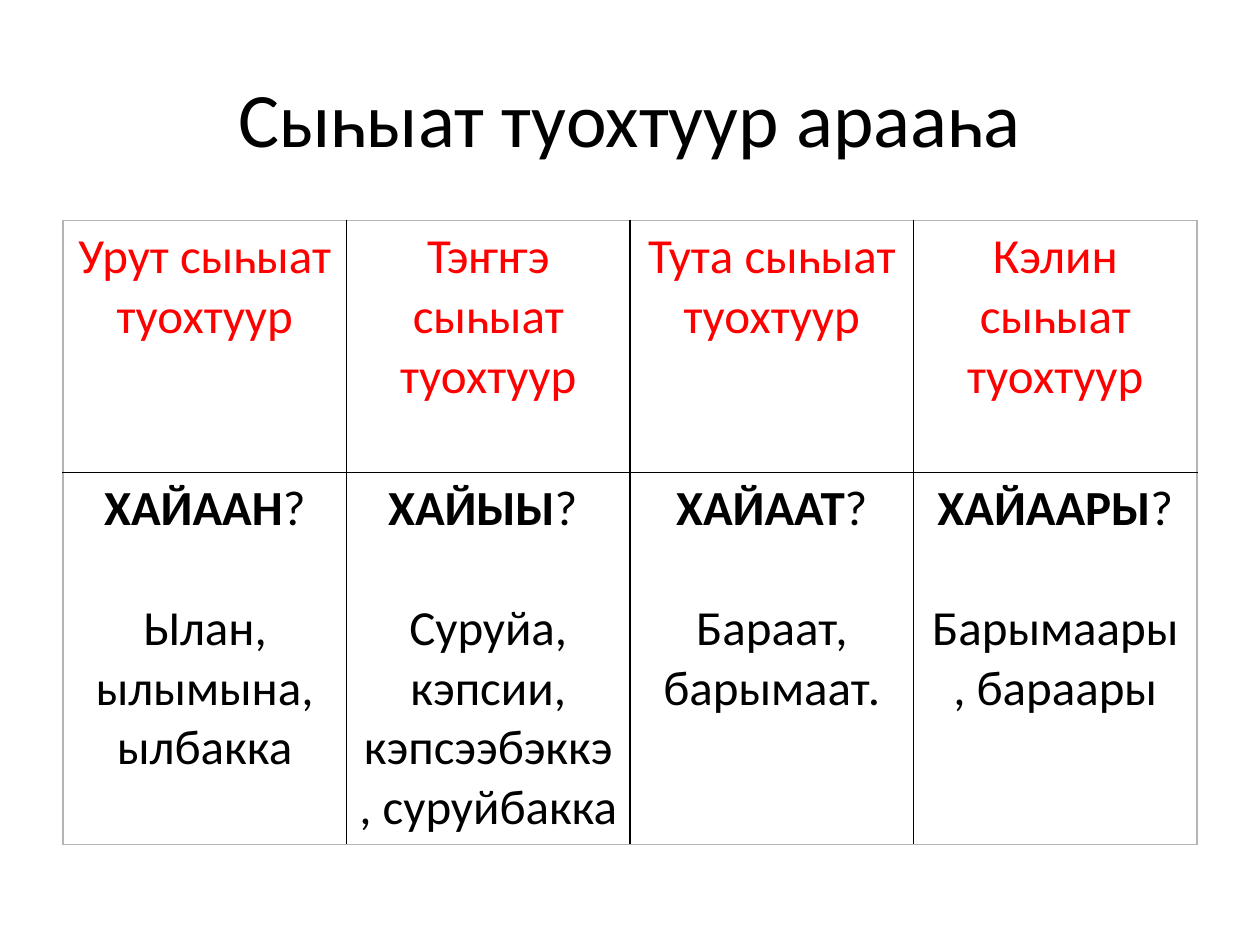
import pptx
import pptx.dml.color
import pptx.enum.text
import pptx.oxml
import pptx.oxml.ns
import pptx.util

Inches = pptx.util.Inches
Pt = pptx.util.Pt

TITLE = "Сыһыат туохтуур арааһа"
VERB_FORMS = [
    ("Урут сыһыат туохтуур", "ХАЙААН", "?", "Ылан, ылымына, ылбакка"),
    ("Тэҥҥэ сыһыат туохтуур", "ХАЙЫЫ", "? ", "Суруйа, кэпсии, кэпсээбэккэ, суруйбакка"),
    ("Тута сыһыат туохтуур", "ХАЙААТ", "?", "Бараат, барымаат."),
    ("Кэлин сыһыат туохтуур", "ХАЙААРЫ", "?", "Барымаары, бараары"),
]
ROW_HEIGHTS = [2.0, 2.95]
TABLE_LEFT, TABLE_TOP, TABLE_WIDTH = 0.5, 1.75, 9
BLACK, RED, GREY = "000000", "FF0000", "B4B4B4"
LINE_HEIGHT = 34.2


def add_text(paragraph, text, color, size=28, bold=False):
    """Add a formatted run to a centred paragraph."""
    paragraph.alignment = pptx.enum.text.PP_ALIGN.CENTER
    run = paragraph.add_run()
    run.text = text
    for name, value in {"name": "Calibri", "size": Pt(size), "bold": bold}.items():
        setattr(run.font, name, value)
    run.font.color.rgb = pptx.dml.color.RGBColor.from_string(color)


def set_borders(cell, colors):
    """Give a cell its left, right, top and bottom lines."""
    properties = cell._tc.get_or_add_tcPr()
    for index, (side, color) in enumerate(zip("LRTB", colors)):
        line = pptx.oxml.parse_xml(
            f'<a:ln{side} {pptx.oxml.ns.nsdecls("a")} w="{Pt(1)}"><a:solidFill>'
            f'<a:srgbClr val="{color}"/></a:solidFill></a:ln{side}>'
        )
        properties.insert(index, line)


def add_title(slide):
    """Place and fill the title."""
    title = slide.shapes.title
    box = {"left": 0.5, "top": 0.3, "width": 9, "height": 1.25}
    for name, value in box.items():
        setattr(title, name, Inches(value))
    title.text_frame.vertical_anchor = pptx.enum.text.MSO_ANCHOR.MIDDLE
    add_text(title.text_frame.paragraphs[0], TITLE, BLACK, size=44)


def add_verb_table(slide):
    """Build the table with one column for each verb form."""
    columns = len(VERB_FORMS)
    table = slide.shapes.add_table(
        len(ROW_HEIGHTS), columns, Inches(TABLE_LEFT), Inches(TABLE_TOP),
        Inches(TABLE_WIDTH), Inches(sum(ROW_HEIGHTS)),
    ).table
    table.first_row = table.horz_banding = False
    for row, height in zip(table.rows, ROW_HEIGHTS):
        row.height = Inches(height)
    for index, (heading, question, mark, examples) in enumerate(VERB_FORMS):
        table.columns[index].width = Inches(TABLE_WIDTH / columns)
        top, bottom = table.cell(0, index), table.cell(1, index)
        add_text(top.text_frame.paragraphs[0], heading, RED)
        paragraph = bottom.text_frame.paragraphs[0]
        add_text(paragraph, question, BLACK, bold=True)
        add_text(paragraph, mark, BLACK)
        paragraph = bottom.text_frame.add_paragraph()
        paragraph.space_before = Pt(LINE_HEIGHT)
        add_text(paragraph, examples, BLACK)
        left_color = GREY if index == 0 else BLACK
        right_color = GREY if index == columns - 1 else BLACK
        for cell, edges in ((top, (GREY, BLACK)), (bottom, (BLACK, GREY))):
            cell.fill.background()
            set_borders(cell, (left_color, right_color, *edges))


def main():
    """Create and save the slide."""
    presentation = pptx.Presentation()
    presentation.slide_width, presentation.slide_height = Inches(10), Inches(7.5)
    slide = presentation.slides.add_slide(presentation.slide_layouts[5])
    add_title(slide)
    add_verb_table(slide)
    presentation.save("out.pptx")


if __name__ == "__main__":
    main()
